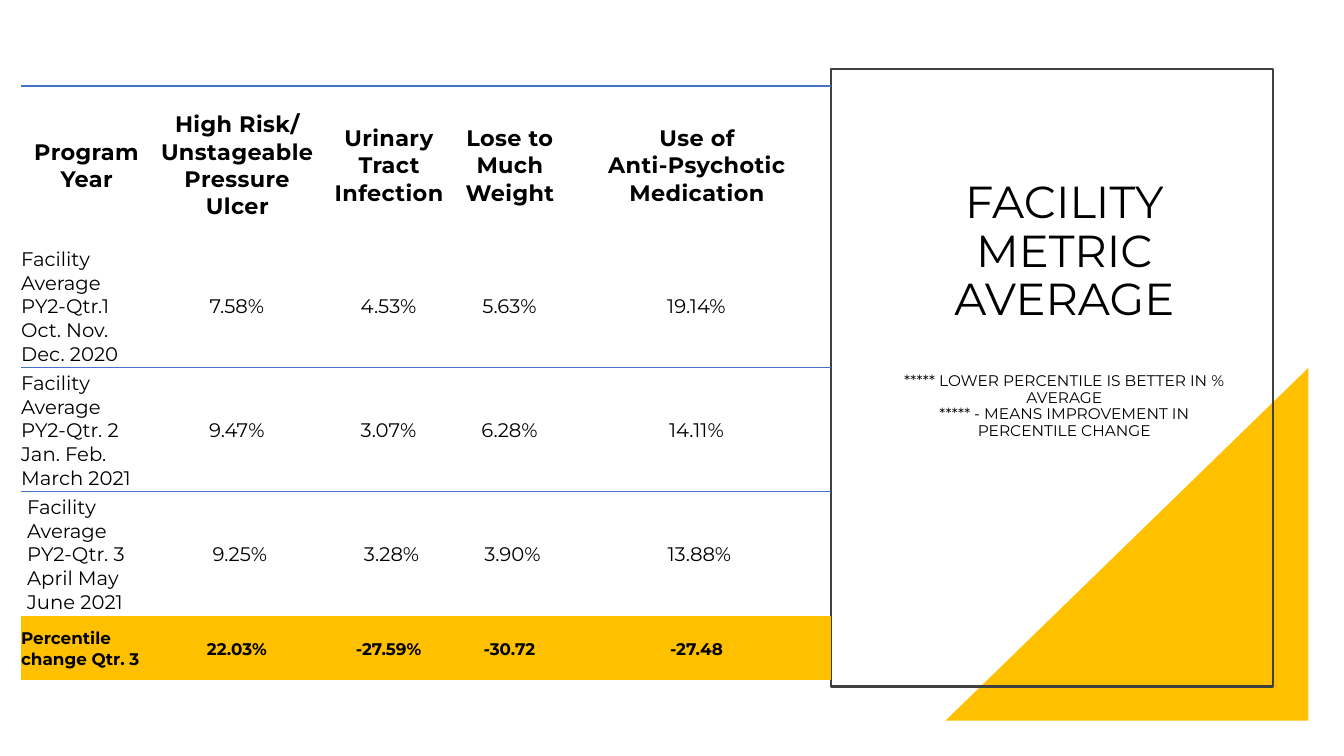
from dataclasses import dataclass

from lxml import etree
from pptx import Presentation
from pptx.dml.color import RGBColor
from pptx.enum.shapes import MSO_SHAPE
from pptx.enum.text import MSO_ANCHOR, PP_ALIGN
from pptx.oxml.ns import qn
from pptx.util import Pt

LEFT, CENTER = PP_ALIGN.LEFT, PP_ALIGN.CENTER
MIDDLE, BOTTOM = MSO_ANCHOR.MIDDLE, MSO_ANCHOR.BOTTOM
RECTANGLE, RIGHT_TRIANGLE = MSO_SHAPE.RECTANGLE, MSO_SHAPE.RIGHT_TRIANGLE

TITLE = "FACILITY METRIC AVERAGE"
NOTES = [
    "***** LOWER PERCENTILE IS BETTER IN % AVERAGE",
    "***** - MEANS IMPROVEMENT IN PERCENTILE CHANGE",
]
HEADER = [
    "Program Year",
    "High Risk/\nUnstageable Pressure Ulcer",
    "Urinary Tract\nInfection",
    "Lose to Much Weight",
    "Use of\nAnti-Psychotic Medication",
]
QUARTERS = [
    ["Facility Average\nPY2-Qtr.1\nOct. Nov. Dec. 2020", "7.58%", "4.53%", "5.63%", "19.14%"],
    ["Facility Average\nPY2-Qtr. 2\nJan. Feb. March 2021", "9.47%", "3.07%", "6.28%", "14.11%"],
    ["Facility Average\nPY2-Qtr. 3\nApril May June 2021", "9.25%", "3.28%", "3.90%", "13.88%"],
]
CHANGE = ["Percentile change Qtr. 3", "22.03%", "-27.59%", "-30.72", "-27.48"]


@dataclass(frozen=True)
class Theme:
    font: str = "Montserrat"
    ink: str = "000000"
    gold: str = "FFC000"
    rule: str = "4472C4"
    frame: str = "404040"
    title_size: float = 32
    note_size: float = 11
    header_size: float = 16
    quarter_size: float = 14
    change_size: float = 12


THEME = Theme()

SLIDE_SIZE = (960, 540)
TRIANGLE_BOX = (675.4, 262.8, 259.2, 252)
FRAME_BOX = (593.3, 49, 316.1, 441.4)
TITLE_BOX = (634.3, 83.5, 252, 234)
TABLE_ORIGIN = (15.1, 61.2)
COLUMN_WIDTHS = (94.3, 121, 95.8, 77, 190.1)
HEADER_HEIGHT, QUARTER_HEIGHT, CHANGE_HEIGHT = 113, 88.6, 46.1
TITLE_GAP = 34
TOP_RULE, ROW_RULE = 1.5, 0.75
LAST_QUARTER_INSET = 4.3


def points(values):
    return [Pt(value) for value in values]


def style_paragraph(paragraph, size, align, bold=False, spacing=0):
    """Format a paragraph; spacing is the tracking in points."""
    paragraph.alignment = align
    for run in paragraph.runs:
        run.font.name = THEME.font
        run.font.size = Pt(size)
        run.font.bold = bold
        run.font.color.rgb = RGBColor.from_string(THEME.ink)
        if spacing:
            run.font._element.set("spc", str(round(spacing * 100)))


def set_borders(cell, top=0, bottom=0):
    """Rule the cell's top and bottom edges; a width of 0 leaves an edge empty."""
    properties = cell._tc.get_or_add_tcPr()
    for edge, width in (("L", 0), ("R", 0), ("T", top), ("B", bottom)):
        line = etree.SubElement(properties, qn(f"a:ln{edge}"), w=str(Pt(width)))
        if width:
            fill = etree.SubElement(line, qn("a:solidFill"))
            etree.SubElement(fill, qn("a:srgbClr"), val=THEME.rule)
        else:
            etree.SubElement(line, qn("a:noFill"))


def add_panel(slide):
    triangle = slide.shapes.add_shape(RIGHT_TRIANGLE, *points(TRIANGLE_BOX))
    triangle.shadow.inherit = False
    triangle.fill.solid()
    triangle.fill.fore_color.rgb = RGBColor.from_string(THEME.gold)
    triangle.line.fill.background()
    triangle._element.spPr.get_or_add_xfrm().set("flipH", "1")

    frame = slide.shapes.add_shape(RECTANGLE, *points(FRAME_BOX))
    frame.shadow.inherit = False
    frame.fill.background()
    frame.line.color.rgb = RGBColor.from_string(THEME.frame)
    frame.line.width = Pt(1.5)

    heading = slide.shapes.add_textbox(*points(TITLE_BOX)).text_frame
    heading.word_wrap = True
    heading.vertical_anchor = BOTTOM
    heading.text = "\n".join([TITLE, *NOTES])
    title, *notes = heading.paragraphs
    style_paragraph(title, THEME.title_size, CENTER)
    for note in notes:
        style_paragraph(note, THEME.note_size, CENTER)
    for paragraph in heading.paragraphs:
        paragraph.line_spacing = 0.9
    notes[0].space_before = Pt(TITLE_GAP)


def add_metrics(slide):
    rows = [HEADER, *QUARTERS, CHANGE]
    heights = [HEADER_HEIGHT, *[QUARTER_HEIGHT] * len(QUARTERS), CHANGE_HEIGHT]
    last_quarter, change_row = len(QUARTERS), len(rows) - 1
    size = (sum(COLUMN_WIDTHS), sum(heights))
    table = slide.shapes.add_table(
        len(rows), len(HEADER), *points(TABLE_ORIGIN + size)).table
    table.first_row = table.horz_banding = False
    for column, width in zip(table.columns, COLUMN_WIDTHS):
        column.width = Pt(width)

    for r, (texts, height) in enumerate(zip(rows, heights)):
        table.rows[r].height = Pt(height)
        is_header, is_change = r == 0, r == change_row
        text_size = (THEME.header_size if is_header else
                     THEME.change_size if is_change else THEME.quarter_size)
        top = TOP_RULE if is_header else ROW_RULE if 1 < r < change_row else 0
        bottom = ROW_RULE if 0 < r < last_quarter else 0
        for c, text in enumerate(texts):
            cell = table.cell(r, c)
            cell.text_frame.text = text
            cell.vertical_anchor = MIDDLE
            cell.margin_left = Pt(LAST_QUARTER_INSET if r == last_quarter else 0)
            cell.margin_top = Pt(1.4)
            cell.margin_right = Pt(0.7 if is_header else 1.4)
            cell.margin_bottom = Pt(0)
            set_borders(cell, top, bottom)
            if is_change:
                cell.fill.solid()
                cell.fill.fore_color.rgb = RGBColor.from_string(THEME.gold)
            else:
                cell.fill.background()
            align = CENTER if is_header or c else LEFT
            for paragraph in cell.text_frame.paragraphs:
                style_paragraph(paragraph, text_size, align,
                                bold=is_header or is_change,
                                spacing=0.3 if is_header else 0)


def main():
    presentation = Presentation()
    presentation.slide_width, presentation.slide_height = points(SLIDE_SIZE)
    slide = presentation.slides.add_slide(presentation.slide_layouts[6])
    add_panel(slide)
    add_metrics(slide)
    presentation.save("out.pptx")


if __name__ == "__main__":
    main()
